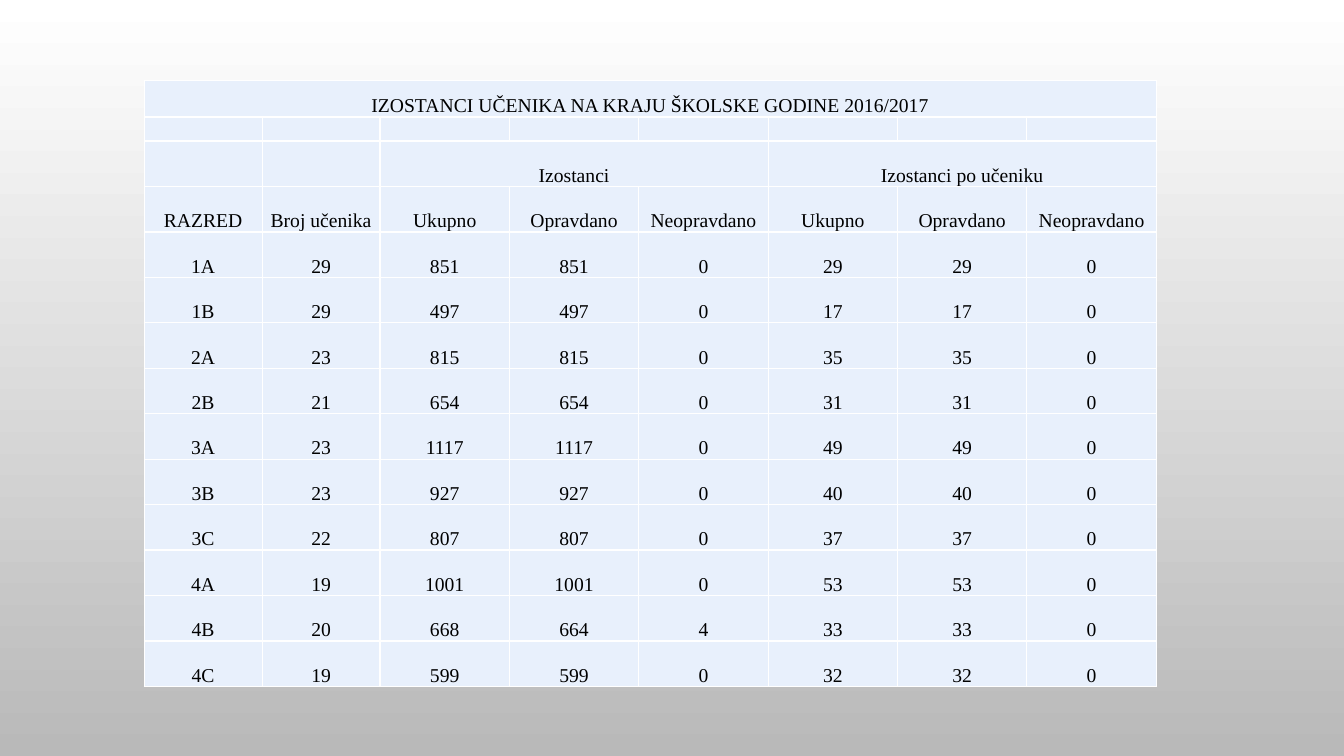
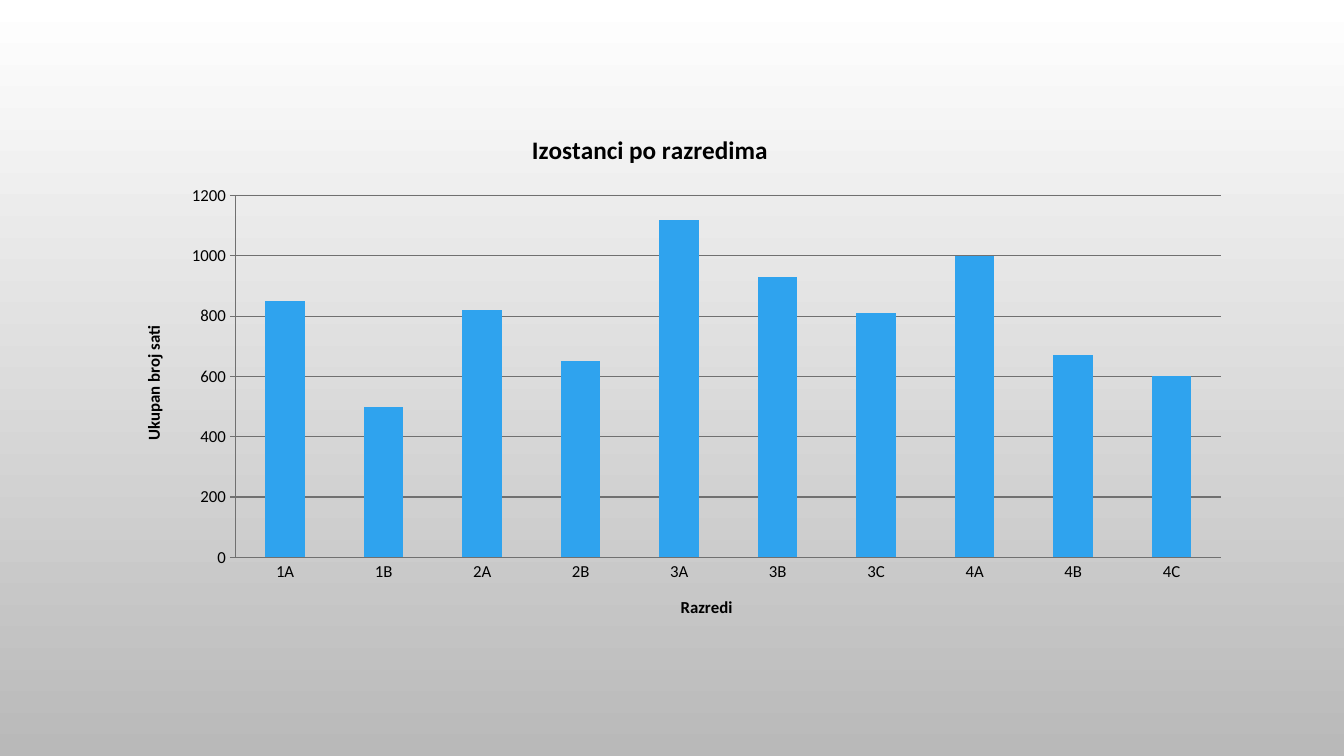
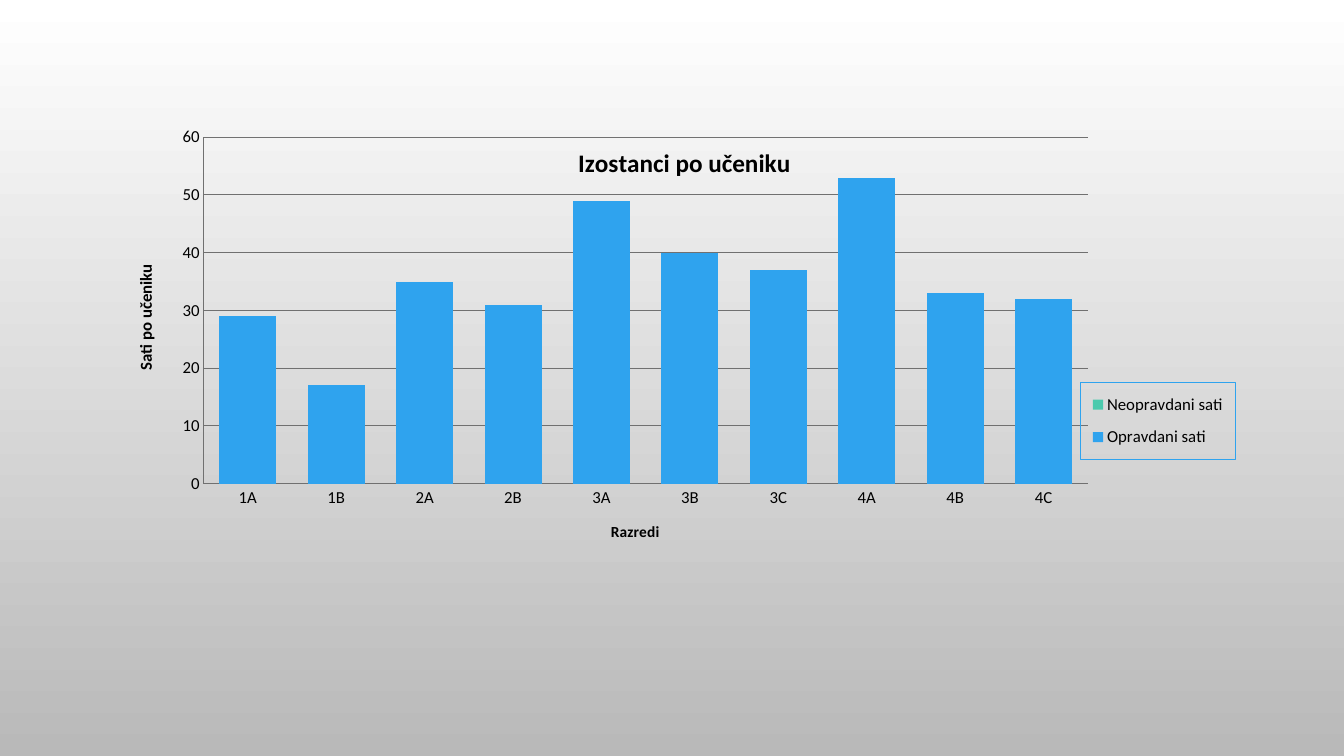
from lxml import etree
from pptx import Presentation
from pptx.chart import data as chart_data
from pptx.dml.color import RGBColor
from pptx.enum import chart as chart_enum, text
from pptx.oxml import ns
from pptx.util import Inches, Pt

WHITE = RGBColor(0xFF, 0xFF, 0xFF)
BLACK = RGBColor(0x00, 0x00, 0x00)
GRAY = RGBColor(0xB9, 0xB9, 0xB9)
AXIS_GRAY = RGBColor(0x70, 0x70, 0x70)
CELL_BLUE = RGBColor(0xE8, 0xF0, 0xFC)
BLUE = RGBColor(0x2F, 0xA3, 0xEE)
GREEN = RGBColor(0x4B, 0xCA, 0xAD)
TABLE_FONT = "Times New Roman"
CHART_FONT = "Calibri"

ABSENCES = [
    ("1A", 29, 851, 0),
    ("1B", 29, 497, 0),
    ("2A", 23, 815, 0),
    ("2B", 21, 654, 0),
    ("3A", 23, 1117, 0),
    ("3B", 23, 927, 0),
    ("3C", 22, 807, 0),
    ("4A", 19, 1001, 0),
    ("4B", 20, 664, 4),
    ("4C", 19, 599, 0),
]
KINDS = ["Ukupno", "Opravdano", "Neopravdano"]


def absence_row(name, pupils, excused, unexcused):
    """Return a class row with its totals and its rounded hours per pupil."""
    hours = [excused + unexcused, excused, unexcused]
    return [name, pupils, *hours, *(round(value / pupils) for value in hours)]


ROWS = [absence_row(*record) for record in ABSENCES]
CLASSES, _, TOTALS, _, _, _, EXCUSED_EACH, UNEXCUSED_EACH = zip(*ROWS)
ROUNDED_TOTALS = [round(total, -1) for total in TOTALS]


def style_master(presentation):
    """Give every slide the white to gray background."""
    fill = presentation.slide_master.background.fill
    fill.gradient()
    fill.gradient_angle = 270
    for stop, color in zip(fill.gradient_stops, (WHITE, GRAY)):
        stop.color.rgb = color


def add_line(parent, tag, color, width):
    """Build a solid outline element and append it to its parent."""
    line = etree.SubElement(parent, ns.qn(tag), w=str(Pt(width)))
    solid = etree.SubElement(line, ns.qn("a:solidFill"))
    etree.SubElement(solid, ns.qn("a:srgbClr"), val=str(color))
    return line


def style_cell(cell):
    """Set the fill, margins and white borders of a cell."""
    cell.fill.solid()
    cell.fill.fore_color.rgb = CELL_BLUE
    cell.vertical_anchor = text.MSO_ANCHOR.BOTTOM
    cell.margin_left = cell.margin_right = cell.margin_top = Inches(0.01)
    cell.margin_bottom = 0
    properties = cell._tc.tcPr
    for index, tag in enumerate(("a:lnL", "a:lnR", "a:lnT", "a:lnB")):
        properties.insert(index, add_line(properties, tag, WHITE, 1))


def write_cell(cell, value):
    """Write one centred value, or keep an empty cell low."""
    paragraph = cell.text_frame.paragraphs[0]
    paragraph.alignment = text.PP_ALIGN.CENTER
    if value == "":
        etree.SubElement(paragraph._p, ns.qn("a:endParaRPr"), sz="1200")
        return
    run = paragraph.add_run()
    run.text = str(value)
    run.font.size = Pt(14)
    run.font.name = TABLE_FONT
    run.font.color.rgb = BLACK


def add_absence_table(slide, left, top, width, height):
    """Add the table of absences by class."""
    blank = [""] * 8
    grid = [
        ["IZOSTANCI UČENIKA NA KRAJU ŠKOLSKE GODINE 2016/2017", *blank[1:]],
        blank,
        ["", "", "Izostanci", "", "", "Izostanci po učeniku", "", ""],
        ["RAZRED", "Broj učenika", *KINDS, *KINDS],
        *ROWS,
    ]
    frame = slide.shapes.add_table(
        len(grid), 8, Inches(left), Inches(top), Inches(width), Inches(height))
    table = frame.table
    table.first_row = table.horz_banding = False
    widths = [1.17] * 2 + [(width - 2 * 1.17) / 6] * 6
    heights = [0.36, 0.24] + [(height - 0.6) / 12] * 12
    for column, size in zip(table.columns, widths):
        column.width = Inches(size)
    for row, size, values in zip(table.rows, heights, grid):
        row.height = Inches(size)
        for cell, value in zip(row.cells, values):
            style_cell(cell)
            write_cell(cell, value)
    for row, first, last in ((0, 0, 7), (2, 2, 4), (2, 5, 7)):
        table.cell(row, first).merge(table.cell(row, last))


def place_part(element, frame, left, top, width=None, height=None):
    """Place a chart part in inches from the corner of its chart frame."""
    layout = element.find(ns.qn("c:layout"))
    is_plot = element.tag == ns.qn("c:plotArea")
    if layout is None:
        layout = etree.Element(ns.qn("c:layout"))
        element.insert(0 if is_plot else 1, layout)
    manual = etree.SubElement(layout, ns.qn("c:manualLayout"))
    settings = [("layoutTarget", "inner")] if is_plot else []
    settings += [("xMode", "edge"), ("yMode", "edge")]
    lengths = (("x", left, frame.width), ("y", top, frame.height),
               ("w", width, frame.width), ("h", height, frame.height))
    settings += [(name, f"{Inches(length) / whole:.4f}")
                 for name, length, whole in lengths if length is not None]
    for name, value in settings:
        etree.SubElement(manual, ns.qn("c:" + name), val=value)


def write_title(title, words, size, frame, position):
    """Write a bold chart or axis title and place it."""
    run = title.text_frame.paragraphs[0].add_run()
    run.text = words
    run.font.size = Pt(size)
    run.font.bold = True
    run.font.name = CHART_FONT
    run.font.color.rgb = BLACK
    place_part(title.element, frame, *position)


def style_axis(axis, maximum=None, step=None):
    """Set the line, labels and scale of an axis."""
    axis.format.line.color.rgb = AXIS_GRAY
    axis.format.line.width = Pt(0.75)
    axis.tick_labels.font.size = Pt(12)
    axis.major_tick_mark = chart_enum.XL_TICK_MARK.NONE
    axis.has_major_gridlines = maximum is not None
    if maximum:
        axis.minimum_scale = 0
        axis.maximum_scale = maximum
        axis.major_unit = step
        axis.major_gridlines.format.line.color.rgb = AXIS_GRAY
        axis.major_gridlines.format.line.width = Pt(0.75)


def add_column_chart(slide, box, kind, series, gap, scale, plot, titles):
    """Add a column chart by class with its plot and titles placed."""
    data = chart_data.CategoryChartData(number_format="0")
    data.categories = CLASSES
    for name, values, _ in series:
        data.add_series(name, values)
    frame = slide.shapes.add_chart(kind, *map(Inches, box), data)
    chart = frame.chart
    chart.font.size = Pt(10)
    chart.font.name = CHART_FONT
    chart.font.color.rgb = BLACK
    chart.has_legend = False
    columns = chart.plots[0]
    columns.gap_width = gap
    columns.vary_by_categories = False
    for item, (_, _, color) in zip(columns.series, series):
        item.format.fill.solid()
        item.format.fill.fore_color.rgb = color
    style_axis(chart.category_axis)
    style_axis(chart.value_axis, *scale)
    place_part(chart.element.find(".//" + ns.qn("c:plotArea")), frame, *plot)
    parts = (chart.chart_title, chart.category_axis.axis_title,
             chart.value_axis.axis_title)
    for part, (words, size, position) in zip(parts, titles):
        write_title(part, words, size, frame, position)
    body = parts[2].element.find(".//" + ns.qn("a:bodyPr"))
    body.set("rot", "-5400000")
    body.set("vert", "horz")
    return frame


def add_legend(frame, left, top, width, height):
    """Add an outlined legend over the right of the chart."""
    chart = frame.chart
    chart.has_legend = True
    chart.legend.position = chart_enum.XL_LEGEND_POSITION.RIGHT
    chart.legend.include_in_layout = False
    chart.legend.font.size = Pt(12)
    element = chart.element.find(".//" + ns.qn("c:legend"))
    place_part(element, frame, left, top, width, height)
    outline = etree.Element(ns.qn("c:spPr"))
    add_line(outline, "a:ln", BLUE, 0.5)
    element.find(ns.qn("c:txPr")).addprevious(outline)


def add_class_chart(slide):
    """Add the chart of total absences by class."""
    frame = add_column_chart(
        slide, (1.2, 1.13, 11.13, 5.21),
        chart_enum.XL_CHART_TYPE.COLUMN_CLUSTERED,
        [("Ukupno", ROUNDED_TOTALS, BLUE)], 150, (1200, 200),
        (1.14, 0.81, 9.77, 3.59),
        [("Izostanci po razredima", 18, (4.03, 0.14)),
         ("Razredi", 12, (5.52, 4.75)),
         ("Ukupan broj sati", 12, (0.18, 2.07))])
    frame.chart.value_axis.major_tick_mark = chart_enum.XL_TICK_MARK.OUTSIDE


def add_pupil_chart(slide):
    """Add the stacked chart of absences per pupil."""
    frame = add_column_chart(
        slide, (1.25, 1.24, 11.08, 5.09),
        chart_enum.XL_CHART_TYPE.COLUMN_STACKED,
        [("Opravdani sati", EXCUSED_EACH, BLUE),
         ("Neopravdani sati", UNEXCUSED_EACH, GREEN)], 55, (60, 10),
        (0.77, 0.12, 8.77, 3.44),
        [("Izostanci po učeniku", 18, (4.44, 0.16)),
         ("Razredi", 11, (4.78, 3.9)),
         ("Sati po učeniku", 12, (0.05, 1.35))])
    frame.chart.plots[0].overlap = 100
    add_legend(frame, 9.47, 2.55, 1.53, 0.77)


def main():
    """Build and save the presentation."""
    presentation = Presentation()
    presentation.slide_width = Inches(13.33)
    presentation.slide_height = Inches(7.5)
    style_master(presentation)
    table_slide, class_slide, pupil_slide = (
        presentation.slides.add_slide(presentation.slide_layouts[6])
        for _ in range(3))
    add_absence_table(table_slide, 1.43, 0.8, 10.04, 6.01)
    add_class_chart(class_slide)
    add_pupil_chart(pupil_slide)
    presentation.save("out.pptx")


if __name__ == "__main__":
    main()
